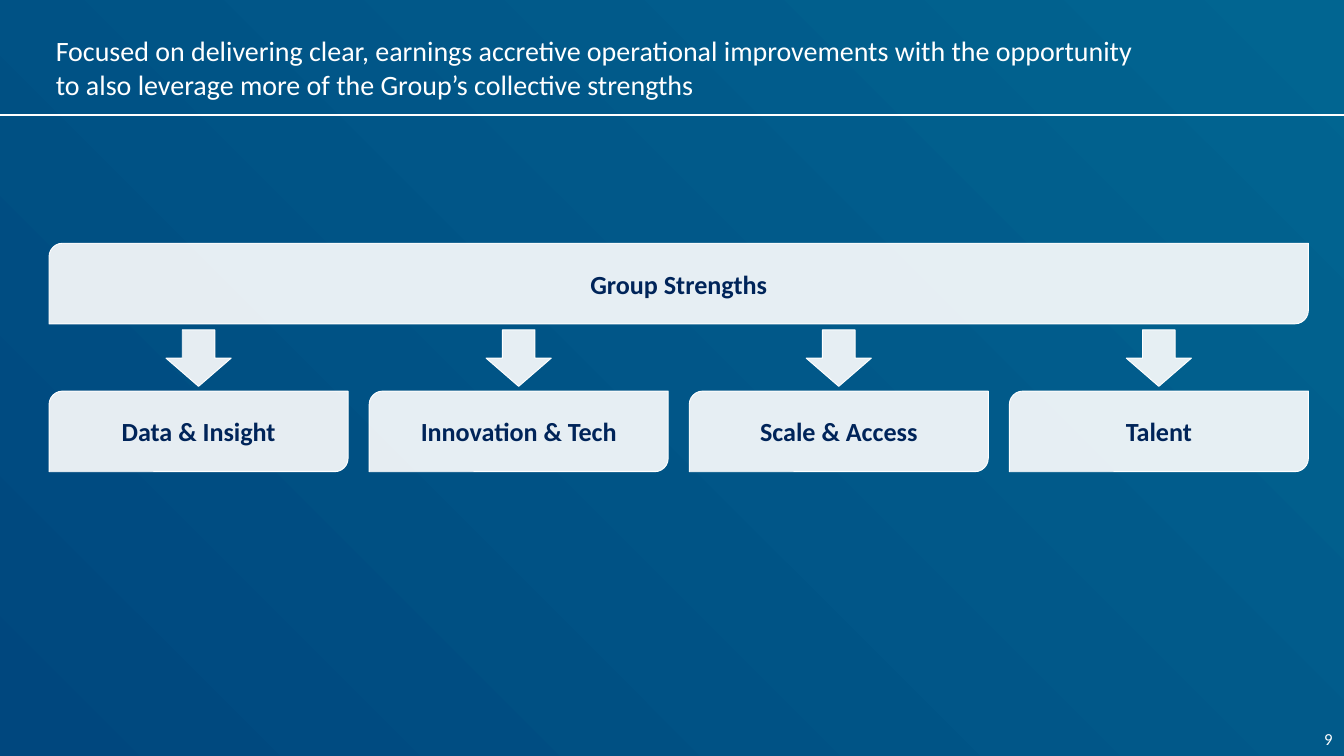
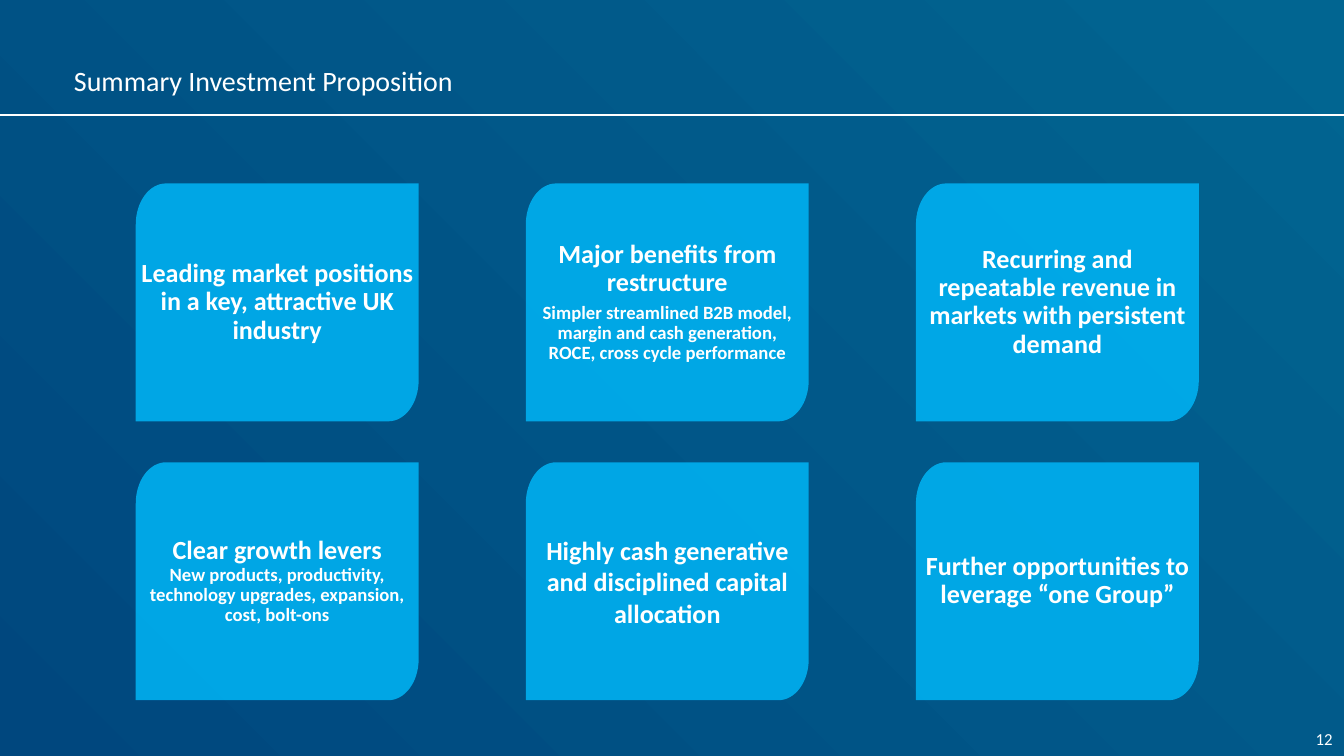
from math import cos, pi, sin

from pptx import Presentation
from pptx.dml.color import RGBColor
from pptx.enum.shapes import MSO_CONNECTOR, MSO_SHAPE
from pptx.enum.text import MSO_ANCHOR, MSO_AUTO_SIZE, PP_ALIGN
from pptx.oxml.ns import qn
from pptx.util import Inches, Pt
from lxml.etree import SubElement

WHITE, NAVY, SKY = "FFFFFF", "002459", "00B0F0"
DEEP, TEAL = "00477E", "016591"
FONT = "Calibri"
WIDE, HIGH = 20, 11.25


def color(code):
    return RGBColor.from_string(code)


def write(frame, *lines, size=28, code=WHITE, bold=False, align=PP_ALIGN.CENTER,
          anchor=MSO_ANCHOR.MIDDLE, inset=(0.1, 0.05), space=None, sub=20, before=0):
    """Fill a frame; lines after the first use the sub size and the before gap."""
    frame.word_wrap = True
    frame.auto_size = MSO_AUTO_SIZE.NONE
    frame.vertical_anchor = anchor
    frame.margin_left = frame.margin_right = Inches(inset[0])
    frame.margin_top = frame.margin_bottom = Inches(inset[1])
    for i, line in enumerate(lines):
        para = frame.add_paragraph() if i else frame.paragraphs[0]
        para.text = line
        para.alignment = align
        para.line_spacing = space
        if i:
            para.space_before = Pt(before)
        font = para.font
        font.name, font.bold = FONT, bold
        font.size = Pt(sub if i else size)
        font.color.rgb = color(code)


def paint(shape, code, edge=None):
    """Give a shape a 90 % opaque fill and an optional thin edge."""
    shape.shadow.inherit = False
    shape.fill.solid()
    shape.fill.fore_color.rgb = color(code)
    tint = next(shape.element.spPr.iter(qn("a:srgbClr")))
    SubElement(tint, qn("a:alpha"), val="90000")
    if edge:
        shape.line.color.rgb = color(edge)
        shape.line.width = Pt(1)
    else:
        shape.line.fill.background()


def add_back(layout):
    fill = layout.background.fill
    fill.gradient()
    fill.gradient_angle = 45
    for stop, code, place in zip(fill.gradient_stops, (DEEP, TEAL), (0, 1)):
        stop.color.rgb = color(code)
        stop.position = place


def add_rule(slide, top):
    rule = slide.shapes.add_connector(
        MSO_CONNECTOR.STRAIGHT, 0, Inches(top), Inches(WIDE), Inches(top))
    rule.line.color.rgb = color(WHITE)
    rule.line.width = Pt(1.5)
    SubElement(rule.element.spPr, qn("a:effectLst"))


def add_text(slide, left, top, width, height, *lines, **style):
    box = slide.shapes.add_textbox(*map(Inches, (left, top, width, height)))
    write(box.text_frame, *lines, **style)


def add_page(deck, title, left, top, number):
    """Add a slide with its title, rule and page number."""
    slide = deck.slides.add_slide(deck.slide_layouts[5])
    head = slide.shapes.title
    head.left, head.top = Inches(left), Inches(top)
    head.width, head.height = Inches(16.62), Inches(0.68)
    write(head.text_frame, title, size=30, align=PP_ALIGN.LEFT, anchor=MSO_ANCHOR.TOP)
    add_rule(slide, 1.71)
    add_text(slide, 17.6, 10.8, 2.33, 0.4, number, size=18,
             align=PP_ALIGN.RIGHT, anchor=MSO_ANCHOR.TOP)
    return slide


def add_panel(slide, left, top, width, text):
    panel = slide.shapes.add_shape(
        MSO_SHAPE.ROUND_2_DIAG_RECTANGLE, *map(Inches, (left, top, width, 1.2)))
    paint(panel, WHITE, WHITE)
    write(panel.text_frame, text, code=NAVY, bold=True, inset=(0.39, 0.16))


def add_arrow(slide, left, top):
    arrow = slide.shapes.add_shape(
        MSO_SHAPE.DOWN_ARROW, *map(Inches, (left, top, 0.97, 0.84)))
    paint(arrow, WHITE, WHITE)


def arc(x, y, start):
    """Points of a quarter ellipse around x, y, clockwise from an angle."""
    turns = [start + pi / 2 * i / 16 for i in range(17)]
    return [(Inches(x + 0.45 * cos(t)), Inches(y + 0.61 * sin(t))) for t in turns]


def add_leaf(slide, left, top, width, height):
    """Draw a card rounded at its top left and bottom right."""
    right, base = left + width, top + height
    points = arc(left + 0.45, top + 0.61, pi)
    points.append((Inches(right), Inches(top)))
    points += arc(right - 0.45, base - 0.61, 0)
    points.append((Inches(left), Inches(base)))
    maker = slide.shapes.build_freeform(*points[0])
    maker.add_line_segments(points[1:])
    paint(maker.convert_to_shape(), SKY)


def add_strengths(deck):
    slide = add_page(
        deck, "Focused on delivering clear, earnings accretive operational improvements "
        "with the opportunity to also leverage more of the Group’s collective strengths",
        0.73, 0.45, "9")
    left, full, width = 0.73, 18.74, 4.45
    add_panel(slide, left, 3.62, full, "Group Strengths")
    names = ["Data & Insight", "Innovation & Tech", "Scale & Access", "Talent"]
    step = (full - width) / (len(names) - 1)
    for i, name in enumerate(names):
        x = left + i * step
        add_arrow(slide, x + (width - 0.97) / 2, 4.91)
        add_panel(slide, x, 5.82, width, name)


def add_summary(deck):
    slide = add_page(deck, "Summary Investment Proposition", 1, 0.9, "12")
    width, height = 4.21, 3.54
    # text width, text height, line spacing, gap before detail, lines
    cards = [
        (4.21, 1.27, 0.9, 0, ["Leading market positions in a key, attractive UK industry"]),
        (3.91, 1.88, 0.9, 6, ["Major benefits from restructure",
                              "Simpler streamlined B2B model, margin and cash generation, "
                              "ROCE, cross cycle performance"]),
        (3.84, 1.7, 0.9, 0, ["Recurring and repeatable revenue in markets "
                             "with persistent demand"]),
        (3.95, 1.33, 0.9, 0, ["Clear growth levers",
                              "New products, productivity, technology upgrades, "
                              "expansion, cost, bolt-ons"]),
        (3.98, 1.41, 1.0, 0, ["Highly cash generative and disciplined capital allocation"]),
        (4.21, 0.85, 0.9, 0, ["Further opportunities to leverage “one Group”"]),
    ]
    for i, (wide, tall, space, gap, lines) in enumerate(cards):
        row, col = divmod(i, 3)
        x, y = 2.02 + 5.805 * col, 2.73 + 4.15 * row
        add_leaf(slide, x, y, width, height)
        add_text(slide, x + (width - wide) / 2, y + (height - tall) / 2, wide, tall,
                 *lines, bold=True, inset=(0, 0), space=space, before=gap)


def main():
    deck = Presentation()
    deck.slide_width, deck.slide_height = Inches(WIDE), Inches(HIGH)
    add_back(deck.slide_layouts[5])
    add_strengths(deck)
    add_summary(deck)
    deck.save("out.pptx")


if __name__ == "__main__":
    main()
